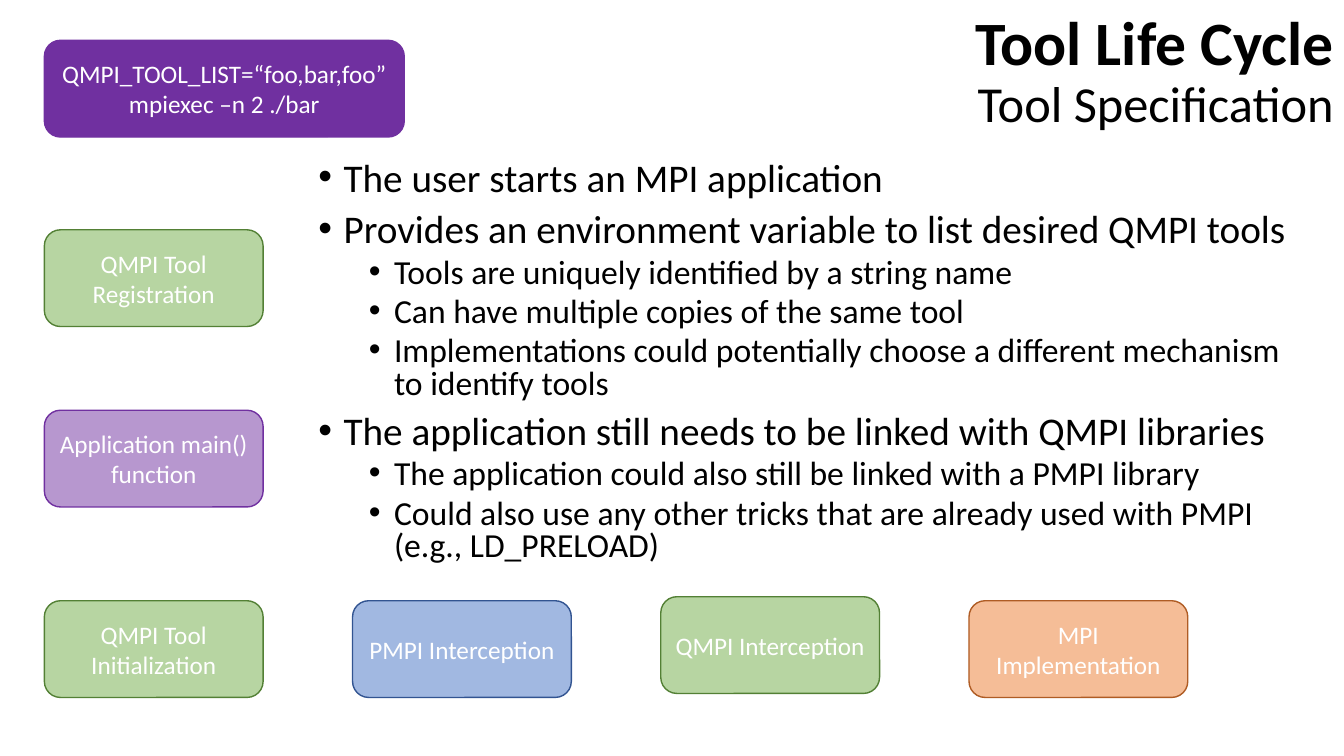
from dataclasses import dataclass

from lxml.etree import SubElement
from pptx import Presentation
from pptx.dml.color import RGBColor
from pptx.enum.shapes import MSO_SHAPE
from pptx.enum.text import MSO_ANCHOR, MSO_AUTO_SIZE, PP_ALIGN
from pptx.oxml.ns import qn
from pptx.util import Inches, Pt


@dataclass(frozen=True)
class Theme:
    """Colours, font and type sizes of the slide."""
    font: str = "Calibri"
    text: str = "000000"
    stage_text: str = "FFFFFF"
    qmpi: tuple = ("70AD47", "538035")
    application: tuple = ("7030A0", "7030A0")
    pmpi: tuple = ("4472C4", "325491")
    mpi: tuple = ("ED7D31", "AF5C24")
    title_size: int = 44
    subtitle_size: int = 36
    point_sizes: tuple = (28, 24)
    stage_size: int = 18


class SlideBuilder:
    """Adds styled elements to one slide."""

    def __init__(self, slide, theme):
        """Keep the slide and its theme."""
        self.slide = slide
        self.theme = theme

    def add_run(self, paragraph, text, size, color, bold=False):
        """Append one formatted run."""
        run = paragraph.add_run()
        run.text = text
        run.font.name = self.theme.font
        run.font.size = Pt(size)
        run.font.bold = bold
        run.font.color.rgb = RGBColor.from_string(color)

    def title(self, heading, subheading, left, top, width, height):
        """Place the two-line title."""
        title = self.slide.shapes.title
        title.left, title.top = Inches(left), Inches(top)
        title.width, title.height = Inches(width), Inches(height)
        frame = title.text_frame
        frame.auto_size = MSO_AUTO_SIZE.NONE
        frame.vertical_anchor = MSO_ANCHOR.MIDDLE
        paragraph = frame.paragraphs[0]
        paragraph.alignment = PP_ALIGN.RIGHT
        paragraph.line_spacing = 0.9
        self.add_run(paragraph, heading, self.theme.title_size, self.theme.text, True)
        paragraph.add_line_break()
        self.add_run(paragraph, subheading, self.theme.subtitle_size, self.theme.text)

    def points(self, points, left, top, width, height):
        """Add a two-level bulleted list."""
        box = self.slide.shapes.add_textbox(
            Inches(left), Inches(top), Inches(width), Inches(height))
        frame = box.text_frame
        frame.word_wrap = True
        for index, (level, text) in enumerate(points):
            paragraph = frame.add_paragraph() if index else frame.paragraphs[0]
            paragraph.level = level
            paragraph.line_spacing = 0.8
            paragraph.space_before = Pt(5 if level else 10)
            properties = paragraph._p.get_or_add_pPr()
            properties.set("marL", str(Inches(0.25 + 0.5 * level)))
            properties.set("indent", str(Inches(-0.25)))
            SubElement(properties, qn("a:buFont")).set("typeface", "Arial")
            SubElement(properties, qn("a:buChar")).set("char", "•")
            self.add_run(paragraph, text, self.theme.point_sizes[level], self.theme.text)

    def stage(self, text, colors, left, top, width=2.17, faded=True):
        """Add a rounded life cycle stage."""
        stage = self.slide.shapes.add_shape(
            MSO_SHAPE.ROUNDED_RECTANGLE,
            Inches(left), Inches(top), Inches(width), Inches(0.96))
        stage.shadow.inherit = False
        fill, line = colors
        stage.fill.solid()
        stage.fill.fore_color.rgb = RGBColor.from_string(fill)
        if faded:
            color = stage._element.spPr.find(qn("a:solidFill")).find(qn("a:srgbClr"))
            SubElement(color, qn("a:alpha")).set("val", "50000")
        stage.line.color.rgb = RGBColor.from_string(line)
        stage.line.width = Pt(1)
        frame = stage.text_frame
        frame.word_wrap = True
        frame.vertical_anchor = MSO_ANCHOR.MIDDLE
        paragraph = frame.paragraphs[0]
        paragraph.alignment = PP_ALIGN.CENTER
        self.add_run(paragraph, text, self.theme.stage_size, self.theme.stage_text)


def main():
    """Build and save the tool life cycle slide."""
    presentation = Presentation()
    presentation.slide_width = Inches(13.33)
    presentation.slide_height = Inches(7.5)
    theme = Theme()
    slide = presentation.slides.add_slide(presentation.slide_layouts[5])
    builder = SlideBuilder(slide, theme)

    builder.title("Tool Life Cycle", "Tool Specification", 1.83, 0, 11.5, 1.45)

    first_column, column_step, bottom_row = 0.44, 3.057, 5.96
    startup_stages = [
        ("QMPI Tool Registration", theme.qmpi, 2.28),
        ("Application main() function", theme.application, 4.07),
    ]
    for text, colors, top in startup_stages:
        builder.stage(text, colors, first_column, top)

    call_stages = [
        ("QMPI Tool Initialization", theme.qmpi, bottom_row),
        ("PMPI Interception", theme.pmpi, bottom_row),
        ("QMPI Interception", theme.qmpi, 5.92),
        ("MPI Implementation", theme.mpi, bottom_row),
    ]
    for column, (text, colors, top) in enumerate(call_stages):
        builder.stage(text, colors, first_column + column * column_step, top)

    builder.points([
        (0, "The user starts an MPI application"),
        (0, "Provides an environment variable to list desired QMPI tools"),
        (1, "Tools are uniquely identified by a string name"),
        (1, "Can have multiple copies of the same tool"),
        (1, "Implementations could potentially choose a different mechanism to identify tools"),
        (0, "The application still needs to be linked with QMPI libraries"),
        (1, "The application could also still be linked with a PMPI library"),
        (1, "Could also use any other tricks that are already used with PMPI (e.g., LD_PRELOAD)"),
    ], 3.06, 1.56, 10.04, 4.33)

    builder.stage("QMPI_TOOL_LIST=“foo,bar,foo” mpiexec –n 2 ./bar",
                  theme.application, first_column, 0.4, width=3.57, faded=False)

    presentation.save("out.pptx")


if __name__ == "__main__":
    main()
